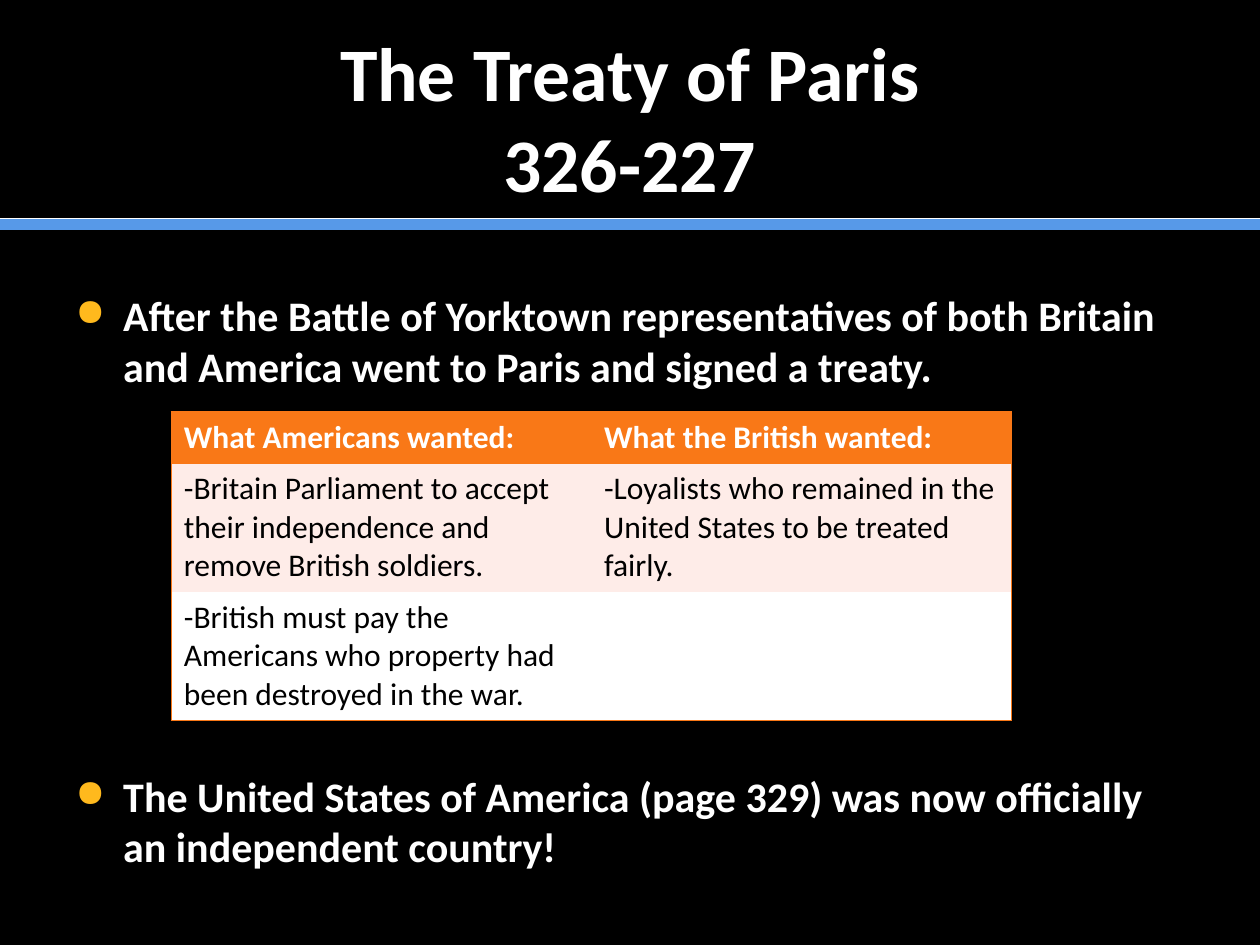
"""Build the Treaty of Paris slide with two bullets and a table of demands."""
from dataclasses import dataclass

from lxml import etree
from pptx import Presentation
from pptx import util as u
from pptx.dml.color import RGBColor
from pptx.enum import shapes, text
from pptx.oxml import ns


@dataclass(frozen=True)
class Theme:
    font: str = "Calibri"
    black: str = "000000"
    white: str = "FFFFFF"
    blue: str = "5799E8"
    gold: str = "FFB91D"
    orange: str = "F97817"
    pink: str = "FEECE8"
    title: float = 43.2
    body: int = 24
    cell: int = 18


theme = Theme()


def style(para, size, color, bold=True):
    font = para.font
    font.name, font.size, font.bold = theme.font, u.Pt(size), bold
    font.color.rgb = RGBColor.from_string(color)


def add(parent, tag, **attrs):
    return etree.SubElement(parent, ns.qn(tag), attrs)


deck = Presentation()
deck.slide_width, deck.slide_height = u.Inches(10), u.Inches(7.5)
slide = deck.slides.add_slide(deck.slide_layouts[6])
fill = slide.background.fill
fill.solid()
fill.fore_color.rgb = RGBColor.from_string(theme.black)

for top, color, width in ((1.78, theme.blue, 7), (1.73, theme.white, 0.5)):
    rule = slide.shapes.add_connector(
        shapes.MSO_CONNECTOR.STRAIGHT, 0, u.Inches(top), u.Inches(10), u.Inches(top))
    rule.line.color.rgb = RGBColor.from_string(color)
    rule.line.width = u.Pt(width)
    add(rule._element.spPr, "a:effectLst")

title = slide.shapes.add_textbox(u.Inches(0.5), u.Inches(0.3), u.Inches(9), u.Inches(1.25))
frame = title.text_frame
frame.word_wrap = True
frame.vertical_anchor = text.MSO_ANCHOR.MIDDLE
para = frame.paragraphs[0]
para.text = "The Treaty of Paris\v326-227"
para.alignment = text.PP_ALIGN.CENTER
style(para, theme.title, theme.white)

body = slide.shapes.add_textbox(u.Inches(0.5), u.Inches(2.25), u.Inches(9), u.Inches(5.25))
frame = body.text_frame
frame.word_wrap = True
points = (
    ("After the Battle of Yorktown representatives of both Britain "
     "and America went to Paris and signed a treaty.", 0),
    ("The United States of America (page 329) was now officially "
     "an independent country!", 217),
)
for index, (words, gap) in enumerate(points):
    para = frame.add_paragraph() if index else frame.paragraphs[0]
    para.text = words
    para.space_before = u.Pt(gap)
    style(para, theme.body, theme.white)
    props = para._p.get_or_add_pPr()
    props.set("marL", str(u.Inches(0.38)))
    props.set("indent", str(-u.Inches(0.38)))
    marks = etree.Element("marks")
    add(add(marks, "a:buClr"), "a:srgbClr", val=theme.gold)
    add(marks, "a:buSzPct", val="90000")
    add(marks, "a:buChar", char="●")
    last = props.find(ns.qn("a:defRPr"))
    for mark in list(marks):
        last.addprevious(mark)

rows = (
    ("What Americans wanted:", "What the British wanted:"),
    ("-Britain Parliament to accept their independence and remove British soldiers.",
     "-Loyalists who remained in the United States to be treated fairly."),
    ("-British must pay the Americans who property had been destroyed in the war.", ""),
)
fills = (theme.orange, theme.pink, theme.white)
heights = (0.41, 1.02, 1.02)
table = slide.shapes.add_table(
    3, 2, u.Inches(1.36), u.Inches(3.27), u.Inches(6.67), u.Inches(sum(heights))).table
for row, (words, color, height) in enumerate(zip(rows, fills, heights)):
    table.rows[row].height = u.Inches(height)
    for col, label in enumerate(words):
        cell = table.cell(row, col)
        cell.text = label
        head = row == 0
        style(cell.text_frame.paragraphs[0], theme.cell,
              theme.white if head else theme.black, head)
        props = cell._tc.get_or_add_tcPr()
        edges = {"L": col == 0, "R": col == 1, "T": row == 0, "B": row == 2}
        for side, outer in edges.items():
            line = add(props, f"a:ln{side}", w=str(u.Pt(1)))
            if outer:
                add(add(line, "a:solidFill"), "a:srgbClr", val=theme.orange)
            else:
                add(line, "a:noFill")
        cell.fill.solid()
        cell.fill.fore_color.rgb = RGBColor.from_string(color)

deck.save("out.pptx")
